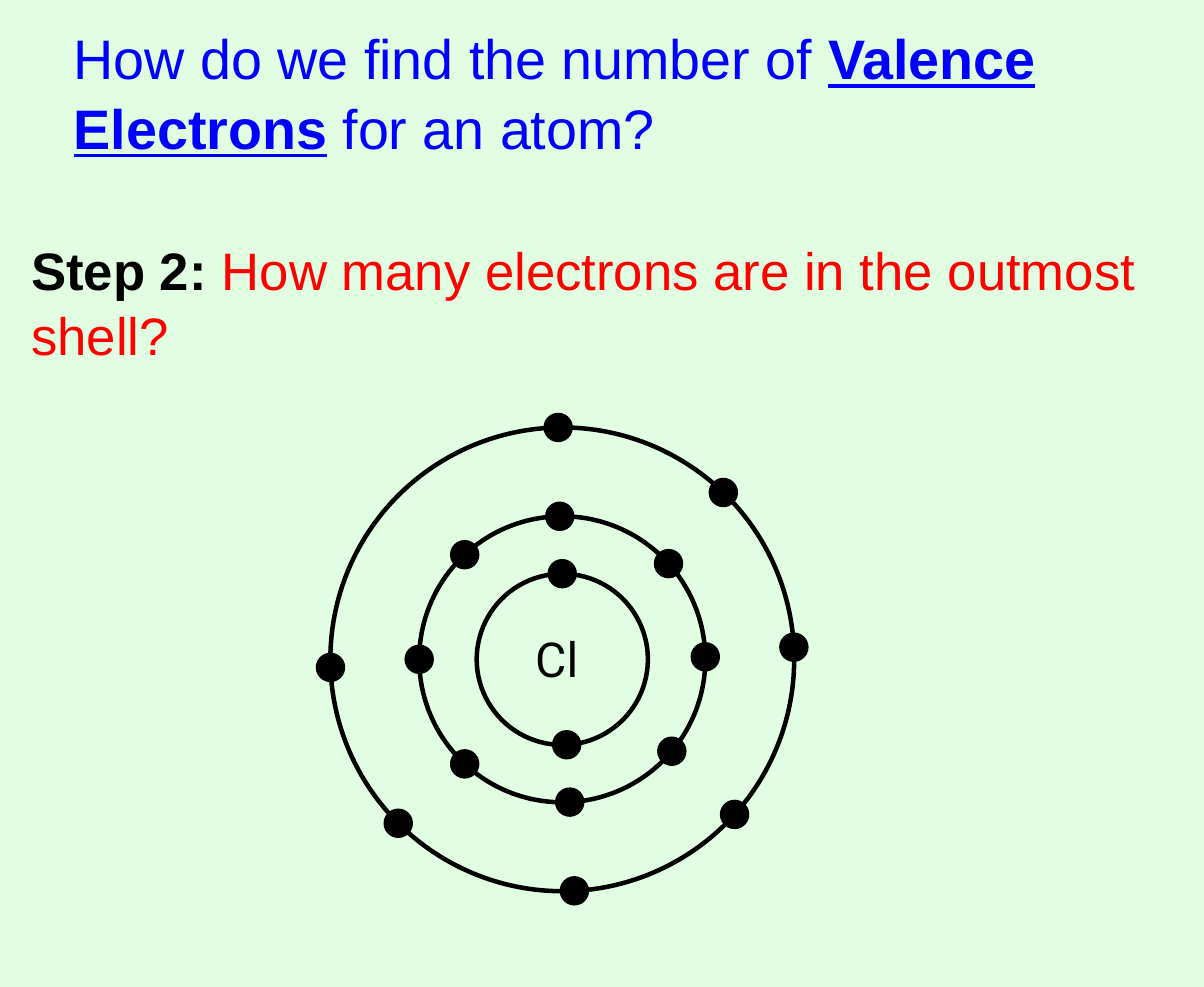
from math import cos, radians, sin

from pptx import Presentation
from pptx.dml.color import RGBColor
from pptx.enum.shapes import MSO_SHAPE
from pptx.enum.text import MSO_ANCHOR, MSO_AUTO_SIZE, PP_ALIGN
from pptx.util import Inches, Pt

COLORS = {"background": "E2FEE2", "question": "0000FF", "step": "FF0000", "ink": "000000"}
WIDTH, HEIGHT = 11.11, 9.11
NUCLEUS = (0.467 * WIDTH, 0.668 * HEIGHT)
ELECTRON_RADIUS = 0.115
SHELLS = [
    (0.79, [0, 177]),
    (1.32, [-1, 48, 89, 130, 177, 223, 270, 317]),
    (2.14, [-1, 44, 87, 132, 177, 225, 268]),
]


def rgb(name):
    return RGBColor.from_string(COLORS[name])


def share_box(left, top, width, height):
    return [Inches(round(share * side, 2))
            for share, side in zip((left, top, width, height), (WIDTH, HEIGHT) * 2)]


def write(holder, runs, size, font="Arial", spacing=1.0):
    """Fill a text holder with (text, color, emphasis) runs."""
    frame = holder.text_frame
    frame.word_wrap = True
    frame.auto_size = MSO_AUTO_SIZE.NONE
    frame.vertical_anchor = MSO_ANCHOR.TOP
    paragraph = frame.paragraphs[0]
    paragraph.alignment = PP_ALIGN.LEFT
    paragraph.line_spacing = spacing
    for text, color, emphasis in runs:
        run = paragraph.add_run()
        run.text = text
        run.font.name = font
        run.font.size = Pt(size)
        run.font.color.rgb = rgb(color)
        run.font.bold = "bold" in emphasis
        run.font.underline = "underline" in emphasis


def add_circle(slide, center, radius, filled=False):
    x, y = center
    circle = slide.shapes.add_shape(
        MSO_SHAPE.OVAL, Inches(x - radius), Inches(y - radius),
        Inches(2 * radius), Inches(2 * radius))
    circle.shadow.inherit = False
    circle.line.color.rgb = rgb("ink")
    circle.line.width = Pt(3)
    if filled:
        circle.fill.solid()
        circle.fill.fore_color.rgb = rgb("ink")
    else:
        circle.fill.background()


def add_electrons(slide, shell_radius, angles):
    """Place electrons on a shell at clockwise degrees from its top."""
    for angle in map(radians, angles):
        center = (NUCLEUS[0] + shell_radius * sin(angle),
                  NUCLEUS[1] - shell_radius * cos(angle))
        add_circle(slide, center, ELECTRON_RADIUS, filled=True)


def main():
    deck = Presentation()
    deck.slide_width, deck.slide_height = Inches(WIDTH), Inches(HEIGHT)
    slide = deck.slides.add_slide(deck.slide_layouts[5])
    slide.background.fill.solid()
    slide.background.fill.fore_color.rgb = rgb("background")

    question = slide.shapes.title
    question.left, question.top, question.width, question.height = share_box(
        0.052, 0.016, 0.93, 0.148)
    write(question, [
        ("How do we find the number of ", "question", ""),
        ("Valence Electrons", "question", "bold underline"),
        (" for an atom?", "question", ""),
    ], size=37, spacing=1.04)

    step = slide.shapes.add_textbox(*share_box(0.017, 0.233, 0.949, 0.14))
    write(step, [
        ("Step 2: ", "ink", "bold"),
        ("How many electrons are in the outmost shell?", "step", ""),
    ], size=35, spacing=1.04)

    for shell_radius, _ in SHELLS:
        add_circle(slide, NUCLEUS, shell_radius)
    symbol = slide.shapes.add_textbox(*share_box(0.436, 0.632, 0.064, 0.07))
    write(symbol, [("Cl", "ink", "")], size=32, font="Roboto")
    for shell_radius, angles in SHELLS:
        add_electrons(slide, shell_radius, angles)

    deck.save("out.pptx")


if __name__ == "__main__":
    main()
